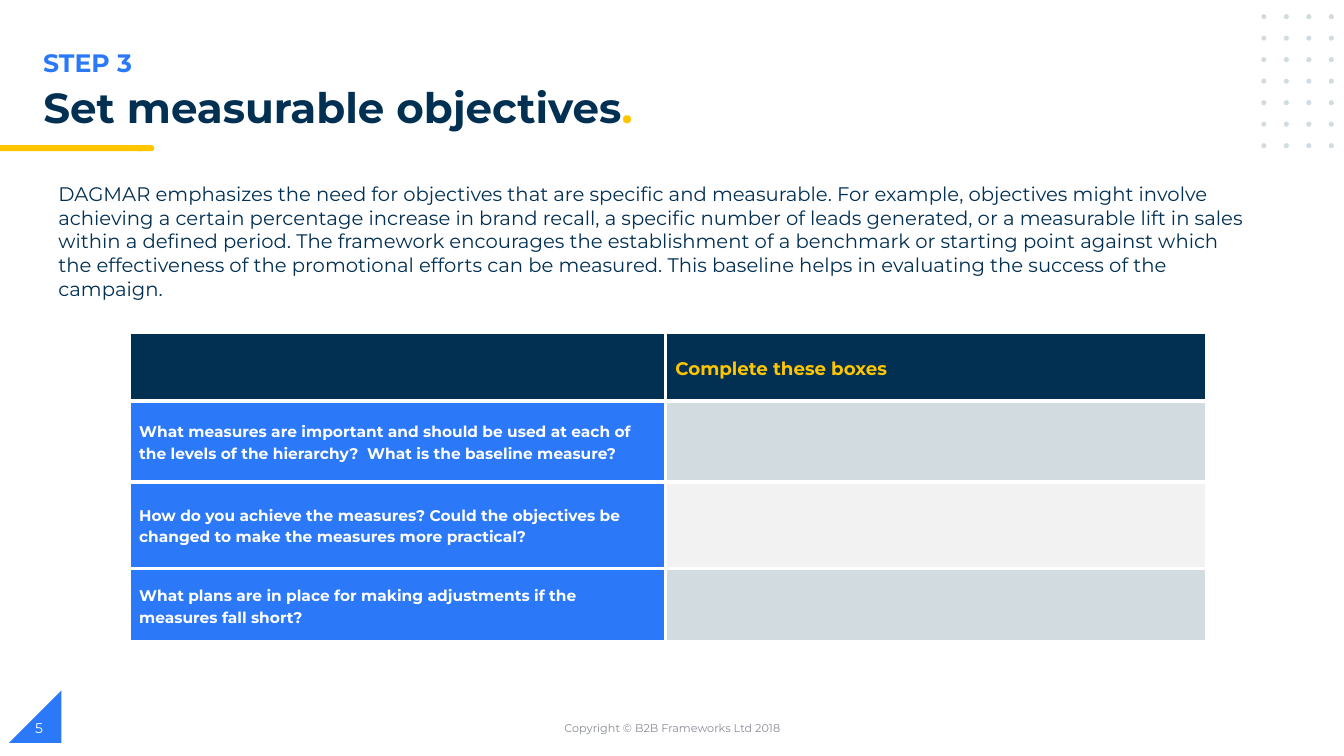
from itertools import product

from lxml.etree import SubElement
from pptx import Presentation
from pptx.dml.color import RGBColor
from pptx.enum.shapes import MSO_SHAPE as Shape
from pptx.enum.text import MSO_ANCHOR as Anchor, MSO_AUTO_SIZE as AutoSize, PP_ALIGN as Align
from pptx.oxml.ns import qn
from pptx.util import Inches, Pt

COLORS = {
    "navy": "023053",
    "blue": "2B79F8",
    "yellow": "FFC600",
    "mist": "D1DBE0",
    "pale": "F2F2F2",
    "gray": "888C97",
    "white": "FFFFFF",
}
FONT = "Montserrat"
TITLE_ONLY = 5

INTRODUCTION = (
    "DAGMAR emphasizes the need for objectives that are specific and measurable. "
    "For example, objectives might involve achieving a certain percentage increase in brand recall, "
    "a specific number of leads generated, or a measurable lift in sales within a defined period. "
    "The framework encourages the establishment of a benchmark or starting point against which "
    "the effectiveness of the promotional efforts can be measured. "
    "This baseline helps in evaluating the success of the campaign."
)
QUESTIONS = [
    "What measures are important and should be used at each of the levels of the hierarchy?  "
    "What is the baseline measure?",
    "How do you achieve the measures? Could the objectives be changed to make the measures more practical?",
    "What plans are in place for making adjustments if the measures fall short?",
]


def color(name):
    return RGBColor.from_string(COLORS[name])


class SlideBuilder:
    """Adds styled elements to one slide; boxes are (left, top, width, height) in inches."""

    def __init__(self, slide):
        self.slide = slide

    def add_run(self, paragraph, text, size, color_name, bold=False):
        run = paragraph.add_run()
        run.text = text
        run.font.name = FONT
        run.font.size = Pt(size)
        run.font.bold = bold
        run.font.color.rgb = color(color_name)

    def add_shape(self, kind, box, fill, mirrored=False):
        shape = self.slide.shapes.add_shape(kind, *map(Inches, box))
        shape.shadow.inherit = False
        shape.fill.solid()
        shape.fill.fore_color.rgb = color(fill)
        shape.line.fill.background()
        if mirrored:
            shape._element.spPr.get_or_add_xfrm().set("flipH", "1")

    def add_text(self, box, text, size, color_name, bold=False, align=Align.LEFT, anchor=Anchor.TOP):
        frame = self.slide.shapes.add_textbox(*map(Inches, box)).text_frame
        frame.word_wrap = True
        frame.vertical_anchor = anchor
        paragraph = frame.paragraphs[0]
        paragraph.alignment = align
        self.add_run(paragraph, text, size, color_name, bold)

    def set_title(self, box, text, ending):
        title = self.slide.shapes.title
        title.left, title.top, title.width, title.height = map(Inches, box)
        frame = title.text_frame
        frame.auto_size = AutoSize.NONE
        frame.vertical_anchor = Anchor.TOP
        paragraph = frame.paragraphs[0]
        paragraph.alignment = Align.LEFT
        paragraph.line_spacing = 0.9
        self.add_run(paragraph, text, 30, "navy", True)
        self.add_run(paragraph, ending, 30, "yellow", True)

    def add_table(self, left, top, widths, heights, rows):
        """Each cell in rows is (text, size, text color, fill)."""
        box = (left, top, sum(widths), sum(heights))
        table = self.slide.shapes.add_table(len(heights), len(widths), *map(Inches, box)).table
        for column, width in zip(table.columns, widths):
            column.width = Inches(width)
        for row, height, contents in zip(table.rows, heights, rows):
            row.height = Inches(height)
            for cell, content in zip(row.cells, contents):
                self.style_cell(cell, *content)

    def style_cell(self, cell, text, size, color_name, fill):
        cell.margin_top = cell.margin_bottom = 0
        cell.vertical_anchor = Anchor.MIDDLE
        properties = cell._tc.get_or_add_tcPr()
        for side in ("a:lnL", "a:lnR", "a:lnT", "a:lnB"):
            border = SubElement(properties, qn(side), w=str(Pt(3)))
            border_fill = SubElement(border, qn("a:solidFill"))
            SubElement(border_fill, qn("a:srgbClr"), val=COLORS["white"])
        cell.fill.solid()
        cell.fill.fore_color.rgb = color(fill)
        if text:
            paragraph = cell.text_frame.paragraphs[0]
            paragraph.line_spacing = 1.15
            self.add_run(paragraph, text, size, color_name, True)


def main():
    presentation = Presentation()
    presentation.slide_width, presentation.slide_height = Inches(13.33), Inches(7.5)
    builder = SlideBuilder(presentation.slides.add_slide(presentation.slide_layouts[TITLE_ONLY]))

    builder.add_shape(Shape.RIGHT_TRIANGLE, (0.09, 6.85, 0.52, 0.52), "blue", mirrored=True)
    builder.add_shape(Shape.FLOWCHART_TERMINATOR, (1.34, 1.44, 0.19, 0.06), "yellow")
    builder.add_shape(Shape.RECTANGLE, (0, 1.44, 1.41, 0.06), "yellow")
    for row, column in product(range(7), range(4)):
        dot = (12.51 + 0.223 * column, 0.14 + 0.2135 * row, 0.05, 0.05)
        builder.add_shape(Shape.OVAL, dot, "mist")

    builder.add_text((0.33, 0.42, 6.69, 0.4), "STEP 3", 18, "blue", bold=True)
    builder.set_title((0.33, 0.82, 11.59, 0.56), "Set measurable objectives", ".")
    builder.add_text((0.48, 1.76, 12.01, 1.04), INTRODUCTION, 14, "navy")

    header = [("", 13, "yellow", "navy"), ("Complete these boxes", 13, "yellow", "navy")]
    answer_fills = ["mist", "pale", "mist"]
    rows = [header] + [
        [(question, 11, "white", "blue"), ("", 11, "navy", fill)]
        for question, fill in zip(QUESTIONS, answer_fills)
    ]
    builder.add_table(1.28, 3.3, [5.32, 5.37], [0.68, 0.8, 0.86, 0.73], rows)

    builder.add_text((4.42, 7.02, 4.5, 0.4), "Copyright © B2B Frameworks Ltd 2018", 8, "gray",
                     align=Align.CENTER, anchor=Anchor.MIDDLE)
    builder.add_text((0.25, 7.02, 3, 0.4), "5", 10, "white", anchor=Anchor.MIDDLE)
    presentation.save("out.pptx")


if __name__ == "__main__":
    main()
